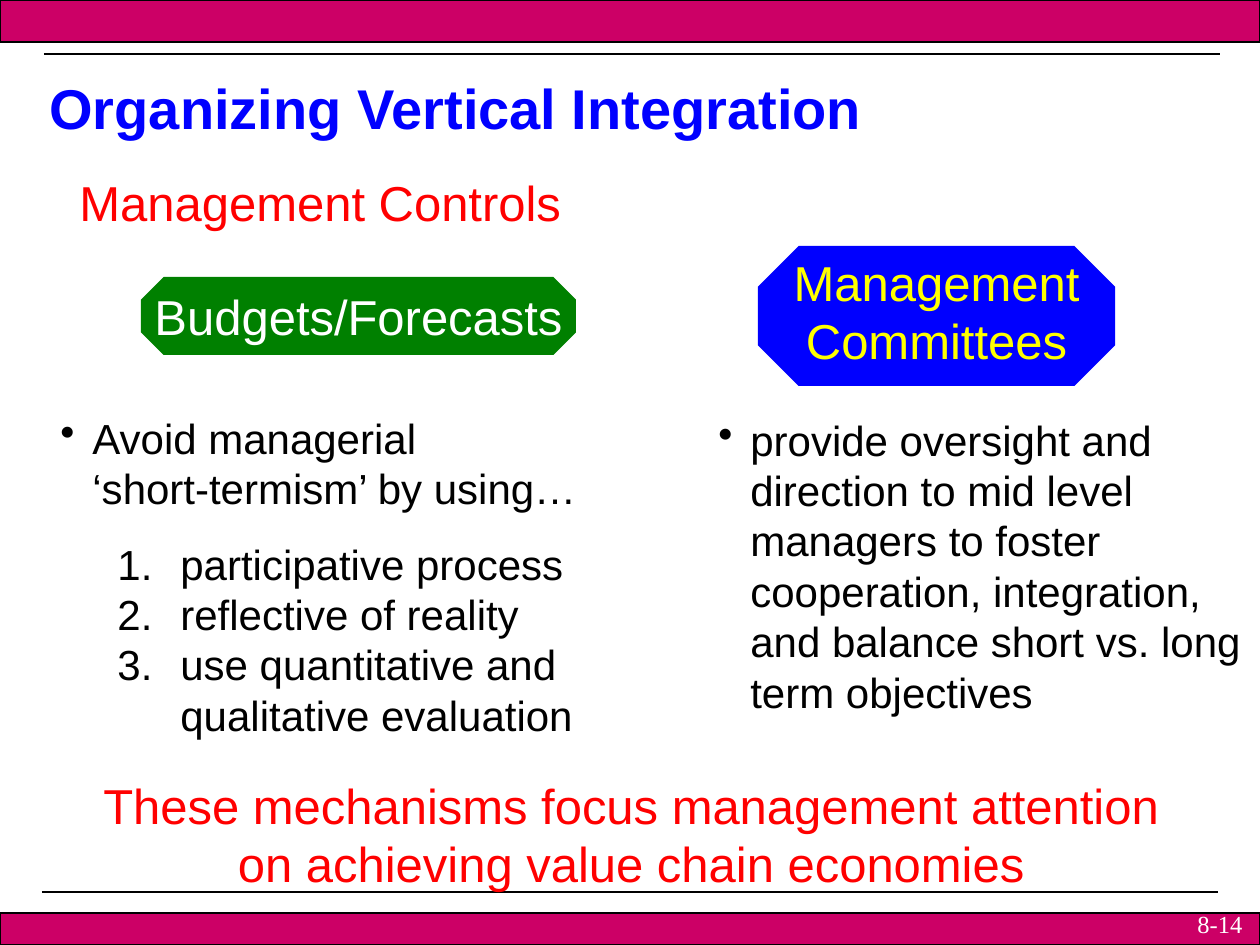
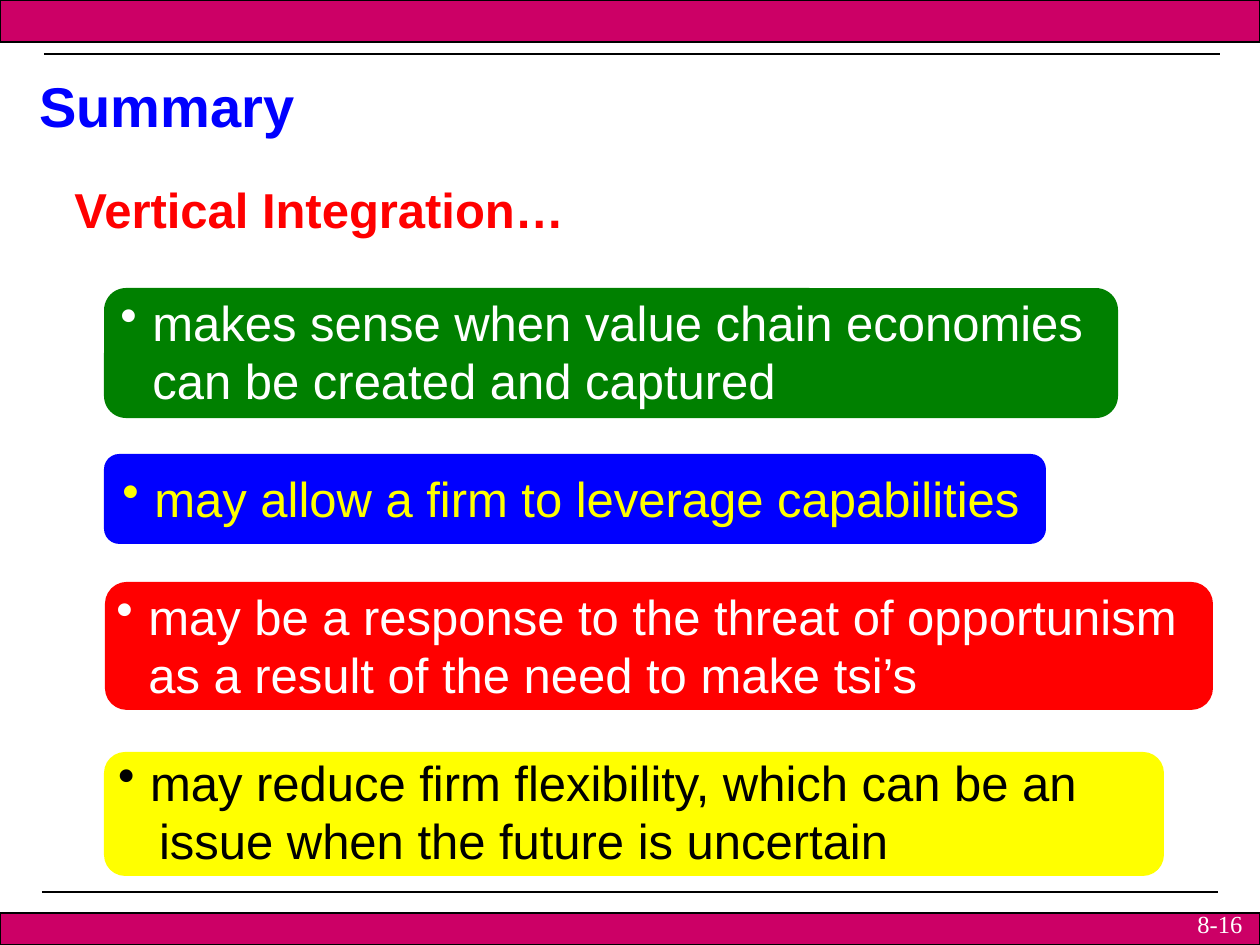
from lxml.etree import SubElement
from pptx import Presentation
from pptx.dml.color import RGBColor
from pptx.enum.shapes import MSO_CONNECTOR, MSO_SHAPE
from pptx.enum.text import MSO_ANCHOR, PP_ALIGN
from pptx.oxml.ns import qn
from pptx.util import Emu, Pt

MAGENTA = RGBColor(0xCC, 0x00, 0x66)
BLUE = RGBColor(0x00, 0x00, 0xFF)
RED = RGBColor(0xFF, 0x00, 0x00)
GREEN = RGBColor(0x00, 0x80, 0x00)
YELLOW = RGBColor(0xFF, 0xFF, 0x00)
BLACK = RGBColor(0x00, 0x00, 0x00)
WHITE = RGBColor(0xFF, 0xFF, 0xFF)

PX = 914400 / 126
BULLET = ("a:buChar", {"char": "•"})
NUMBER = ("a:buAutoNum", {"type": "arabicPeriod"})


def px(*lengths):
    return [Emu(round(length * PX)) for length in lengths]


def write(holder, lines, size, color, bold=False, align=PP_ALIGN.LEFT,
          marker=None, marked=1, hang=32, next_indent=0, font="Arial"):
    frame = holder.text_frame
    frame.word_wrap = True
    for index, line in enumerate(lines):
        paragraph = frame.paragraphs[0] if index == 0 else frame.add_paragraph()
        if marker:
            properties = paragraph._p.get_or_add_pPr()
            margin, indent = px(hang, -hang if index < marked else next_indent)
            properties.set("marL", str(margin))
            properties.set("indent", str(indent))
            if index < marked:
                tag, attributes = marker
                SubElement(properties, qn(tag), attributes)
        paragraph.alignment = align
        paragraph.line_spacing = Pt(size * 1.2)
        run = paragraph.add_run()
        run.text = line
        run.font.name = font
        run.font.size = Pt(size)
        run.font.bold = bold
        run.font.color.rgb = color


deck = Presentation()
deck.slide_width, deck.slide_height = px(1260, 945)

pages = []
for title, title_box, page_number in [
    ("Organizing Vertical Integration", (37, 67, 840, 80), "8-14"),
    ("Summary", (27, 65, 282, 80), "8-16"),
]:
    slide = deck.slides.add_slide(deck.slide_layouts[6])
    pages.append(slide.shapes)
    for left, right, y in [(42, 1218, 892), (44, 1220, 54)]:
        rule = slide.shapes.add_connector(MSO_CONNECTOR.STRAIGHT, *px(left, y, right, y))
        rule.line.color.rgb = BLACK
        rule.line.width = Pt(1.5)
        SubElement(rule._element.spPr, qn("a:effectLst"))
    for top, height in [(0, 42), (913, 32)]:
        band = slide.shapes.add_shape(MSO_SHAPE.RECTANGLE, *px(0, top, 1260, height))
        band.shadow.inherit = False
        band.fill.solid()
        band.fill.fore_color.rgb = MAGENTA
        band.line.color.rgb = BLACK
        band.line.width = Pt(0.75)
    write(slide.shapes.add_textbox(*px(1185, 903, 75, 42)), [page_number], 14, WHITE,
          font="Times New Roman")
    write(slide.shapes.add_textbox(*px(*title_box)), [title], 32, BLUE, bold=True)

organizing, summary = pages

write(organizing.add_textbox(*px(67, 166, 509, 72)), ["Management Controls"], 28, RED)

for box, fill, color, lines, bottom in [
    ((141, 277, 435, 78), GREEN, WHITE, ["Budgets/Forecasts"], 0),
    ((758, 246, 357, 140), BLUE, YELLOW, ["Management", "Committees"], 10),
]:
    control = organizing.add_shape(MSO_SHAPE.OCTAGON, *px(*box))
    control.adjustments[0] = 0.29
    control.shadow.inherit = False
    control.fill.solid()
    control.fill.fore_color.rgb = fill
    control.line.fill.background()
    frame = control.text_frame
    frame.margin_left, frame.margin_top, frame.margin_right, frame.margin_bottom = px(0, 0, 0, bottom)
    frame.vertical_anchor = MSO_ANCHOR.MIDDLE
    write(control, lines, 28, color, align=PP_ALIGN.CENTER)
    frame.word_wrap = False

for box, lines, marker, marked, hang in [
    ((48, 406, 547, 115), ["Avoid managerial", "‘short-termism’ by using…"], BULLET, 1, 32),
    ((105, 532, 486, 217),
     ["participative process", "reflective of reality", "use quantitative and",
      "qualitative evaluation"], NUMBER, 3, 63),
    ((706, 408, 554, 318),
     ["provide oversight and", "direction to mid level", "managers to foster",
      "cooperation, integration,", "and balance short vs. long", "term objectives"],
     BULLET, 1, 32),
]:
    write(organizing.add_textbox(*px(*box)), lines, 24, BLACK,
          marker=marker, marked=marked, hang=hang)

write(organizing.add_textbox(*px(89, 769, 1084, 130)),
      ["These mechanisms focus management attention", "on achieving value chain economies"],
      28, RED, align=PP_ALIGN.CENTER)

write(summary.add_textbox(*px(62, 173, 519, 72)), ["Vertical Integration…"], 28, RED, bold=True)

for box, fill, color, lines, inset, bottom, next_indent in [
    ((104, 288, 1014, 130), GREEN, WHITE,
     ["makes sense when value chain economies", "can be created and captured"], 10, 4, 0),
    ((104, 454, 942, 90), BLUE, YELLOW,
     ["may allow a firm to leverage capabilities"], 14, 2, 0),
    ((105, 582, 1108, 128), RED, WHITE,
     ["may be a response to the threat of opportunism",
      "as a result of the need to make tsi’s"], 5, 2, 0),
    ((104, 752, 1060, 124), YELLOW, BLACK,
     ["may reduce firm flexibility, which can be an",
      "issue when the future is uncertain"], 8, 6, 9),
]:
    conclusion = summary.add_shape(MSO_SHAPE.ROUNDED_RECTANGLE, *px(*box))
    conclusion.adjustments[0] = 0.17
    conclusion.shadow.inherit = False
    conclusion.fill.solid()
    conclusion.fill.fore_color.rgb = fill
    conclusion.line.fill.background()
    frame = conclusion.text_frame
    frame.margin_left, frame.margin_top, frame.margin_right, frame.margin_bottom = px(inset, 0, 0, bottom)
    frame.vertical_anchor = MSO_ANCHOR.MIDDLE
    write(conclusion, lines, 28, color, marker=BULLET, next_indent=next_indent)

deck.save("out.pptx")
